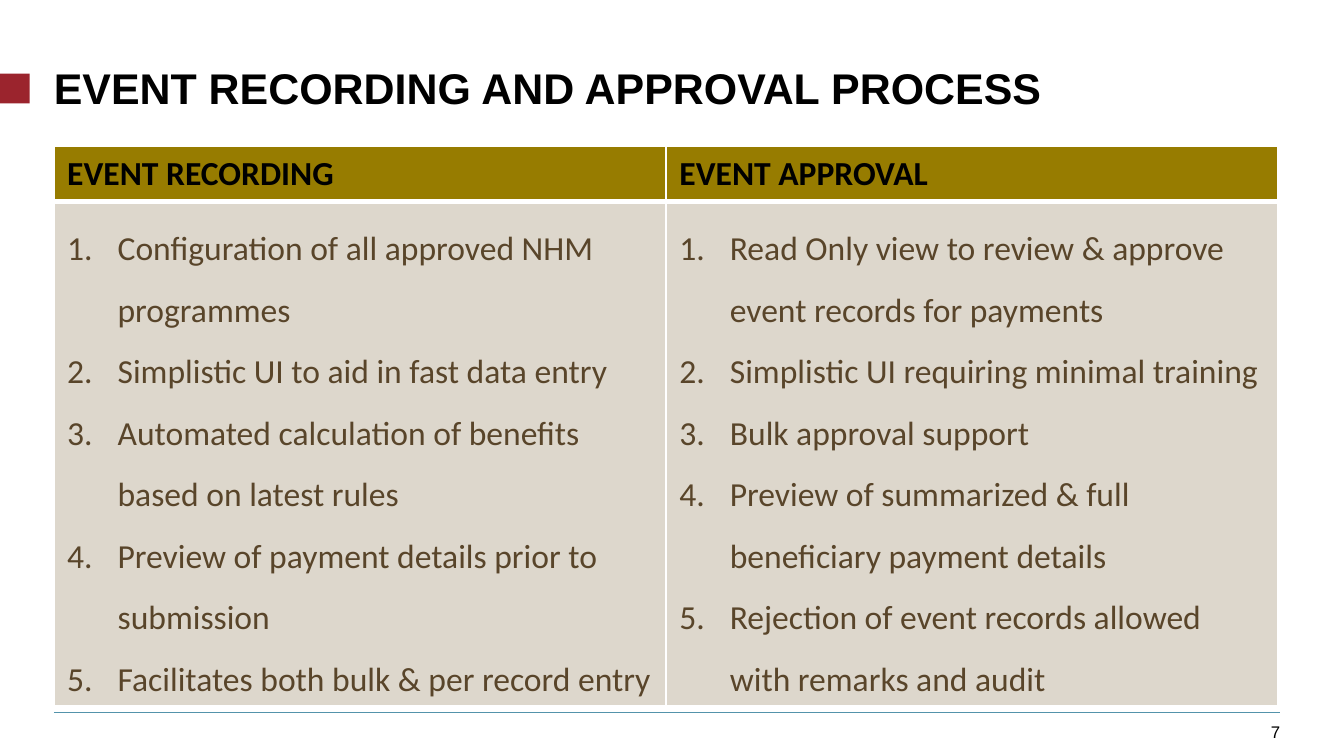
import pptx
import pptx.dml.color
import pptx.enum.shapes
import pptx.enum.text
import pptx.oxml
import pptx.oxml.ns
import pptx.util

Pt = pptx.util.Pt
ALIGN = pptx.enum.text.PP_ALIGN
ANCHOR = pptx.enum.text.MSO_ANCHOR

LEFT, WIDTH = 28.8, 656
COLUMNS = [
    ("EVENT RECORDING", [
        "Configuration of all approved NHM programmes",
        "Simplistic UI to aid in fast data entry",
        "Automated calculation of benefits based on latest rules",
        "Preview of payment details prior to submission",
        "Facilitates both bulk & per record entry",
    ]),
    ("EVENT APPROVAL", [
        "Read Only view to review & approve event records for payments",
        "Simplistic UI requiring minimal training",
        "Bulk approval support",
        "Preview of summarized & full beneficiary payment details",
        "Rejection of event records allowed with remarks and audit",
    ]),
]


def color(value):
    return pptx.dml.color.RGBColor.from_string(value)


def style(para, font, size, value, bold=False):
    for span in para.runs:
        span.font.name = font
        span.font.size = Pt(size)
        span.font.bold = bold
        span.font.color.rgb = color(value)


def clear_insets(frame):
    frame.margin_left = frame.margin_top = Pt(0)
    frame.margin_right = frame.margin_bottom = Pt(0)


def add_element(parent, tag, **attributes):
    child = pptx.oxml.parse_xml(f"<a:{tag} {pptx.oxml.ns.nsdecls('a')}/>")
    for name, value in attributes.items():
        child.set(name, str(value))
    parent.append(child)
    return child


def add_title(page, left, top, width, height):
    """Title text with the red marker at the page's left edge."""
    marker = page.shapes.add_shape(
        pptx.enum.shapes.MSO_SHAPE.RECTANGLE,
        Pt(0), Pt(top + 2), Pt(16), Pt(16))
    marker.shadow.inherit = False
    marker.fill.solid()
    marker.fill.fore_color.rgb = color("9B242D")
    marker.line.fill.background()

    title = page.shapes.title
    title.left, title.top = Pt(left), Pt(top)
    title.width, title.height = Pt(width), Pt(height)
    frame = title.text_frame
    frame.text = "EVENT RECORDING AND APPROVAL PROCESS"
    frame.vertical_anchor = ANCHOR.TOP
    frame.auto_size = pptx.enum.text.MSO_AUTO_SIZE.NONE
    clear_insets(frame)
    para = frame.paragraphs[0]
    para.alignment = ALIGN.LEFT
    para.line_spacing = Pt(23)
    style(para, "Arial", 23, "000000", bold=True)


def paint_cell(cell, fill, bottom):
    """Fill the cell and give it white borders, with its own bottom width."""
    properties = cell._tc.get_or_add_tcPr()
    for tag, width in (("lnL", 1), ("lnR", 1), ("lnT", 1), ("lnB", bottom)):
        border = add_element(properties, tag, w=Pt(width))
        add_element(add_element(border, "solidFill"), "srgbClr", val="FFFFFF")
    cell.fill.solid()
    cell.fill.fore_color.rgb = color(fill)


def fill_list(frame, items):
    frame.text = "\n".join(items)
    for para in frame.paragraphs:
        properties = para._p.get_or_add_pPr()
        properties.set("marL", str(Pt(27)))
        properties.set("indent", str(Pt(-27)))
        add_element(properties, "buFont", typeface="+mj-lt")
        add_element(properties, "buAutoNum", type="arabicPeriod")
        para.line_spacing = 1.5
        style(para, "Calibri", 18, "59452A")


def add_comparison(page, left, top, width, row_heights):
    table = page.shapes.add_table(
        2, len(COLUMNS), Pt(left), Pt(top), Pt(width),
        Pt(sum(row_heights))).table
    for row, height in zip(table.rows, row_heights):
        row.height = Pt(height)
    for index, (heading, items) in enumerate(COLUMNS):
        table.columns[index].width = Pt(width / len(COLUMNS))
        header, body = table.cell(0, index), table.cell(1, index)
        paint_cell(header, "977C00", bottom=3)
        header.text_frame.text = heading
        style(header.text_frame.paragraphs[0], "Calibri", 18, "000000", bold=True)
        paint_cell(body, "DDD7CC", bottom=1)
        fill_list(body.text_frame, items)


def add_footer(page, left, top, width):
    """Thin rule with the page number below its right end."""
    right = left + width
    rule = page.shapes.add_connector(
        pptx.enum.shapes.MSO_CONNECTOR.STRAIGHT,
        Pt(left), Pt(top), Pt(right), Pt(top))
    rule.line.color.rgb = color("5393AB")
    rule.line.width = Pt(0.5)
    add_element(rule._element.spPr, "effectLst")

    box = page.shapes.add_textbox(Pt(right - 15), Pt(top + 3.6), Pt(15), Pt(12))
    frame = box.text_frame
    frame.word_wrap = True
    frame.text = "7"
    frame.vertical_anchor = ANCHOR.BOTTOM
    clear_insets(frame)
    frame.paragraphs[0].alignment = ALIGN.RIGHT
    style(frame.paragraphs[0], "Arial", 9, "000000")


def main():
    deck = pptx.Presentation()
    deck.slide_width, deck.slide_height = Pt(720), Pt(405)
    page = deck.slides.add_slide(deck.slide_layouts[5])
    add_footer(page, LEFT, 381.6, WIDTH + 1)
    add_title(page, LEFT, 37.5, WIDTH, 30)
    add_comparison(page, LEFT, 78.5, WIDTH, [29.5, 270])
    deck.save("out.pptx")


if __name__ == "__main__":
    main()
